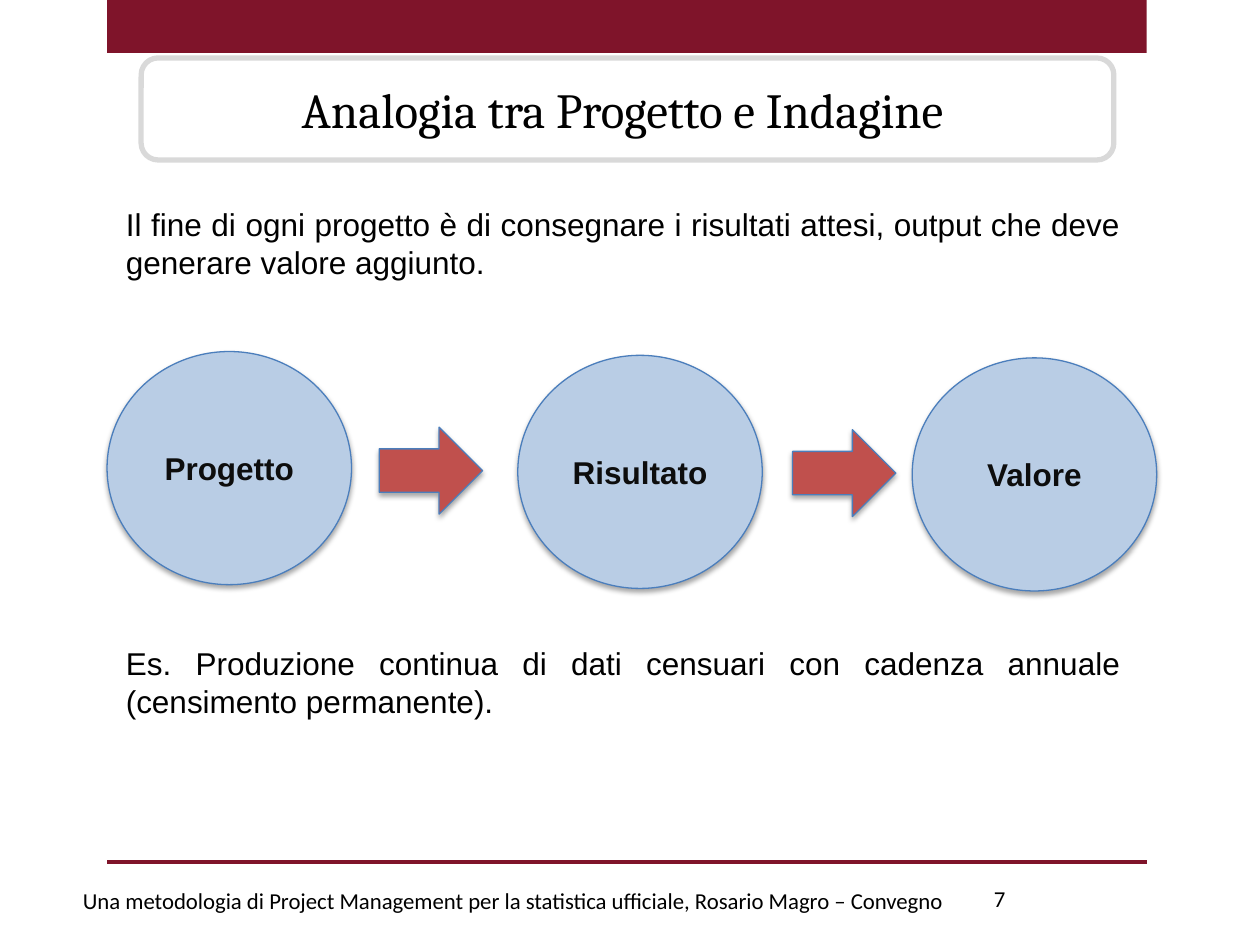
from lxml.etree import SubElement
from pptx import Presentation
from pptx.dml.color import RGBColor
from pptx.enum.shapes import MSO_CONNECTOR, MSO_SHAPE
from pptx.enum.text import MSO_ANCHOR, PP_ALIGN
from pptx.oxml.ns import qn
from pptx.util import Inches, Pt

COLORS = {
    "burgundy": "7F142A",
    "circle": "B9CDE5",
    "arrow": "C0504D",
    "outline": "4B7EBC",
    "frame": "D9D9D9",
    "white": "FFFFFF",
    "black": "000000",
    "dark": "0D0D0D",
}


def color(name):
    """Return the named colour."""
    return RGBColor.from_string(COLORS[name])


def add_run(paragraph, text, size, font="Arial", ink="black", bold=False):
    """Append a formatted run to a paragraph."""
    run = paragraph.add_run()
    run.text = text
    run.font.name = font
    run.font.size = Pt(size)
    run.font.bold = bold
    run.font.color.rgb = color(ink)


def add_shape(slide, kind, box, fill, line=None, width=0.75):
    """Add a filled preset shape without a shadow."""
    shape = slide.shapes.add_shape(kind, *map(Inches, box))
    shape.shadow.inherit = False
    shape.fill.solid()
    shape.fill.fore_color.rgb = color(fill)
    if line:
        shape.line.color.rgb = color(line)
        shape.line.width = Pt(width)
    else:
        shape.line.fill.background()
    return shape


def add_shadow(shape):
    """Give a shape a soft shadow below it."""
    effects = shape._element.spPr.find(qn("a:effectLst"))
    shadow = SubElement(effects, qn("a:outerShdw"), blurRad=str(Pt(3.1)),
                        dist=str(Pt(1.8)), dir="5400000", rotWithShape="0")
    shade = SubElement(shadow, qn("a:srgbClr"), val=COLORS["black"])
    SubElement(shade, qn("a:alpha"), val="35000")


def add_circle(slide, left, top, label):
    """Add a labelled circle of the flow."""
    circle = add_shape(slide, MSO_SHAPE.OVAL, (left, top, 1.94, 1.85), "circle", "outline")
    add_shadow(circle)
    circle.text_frame.vertical_anchor = MSO_ANCHOR.MIDDLE
    paragraph = circle.text_frame.paragraphs[0]
    paragraph.alignment = PP_ALIGN.CENTER
    add_run(paragraph, label, 18, ink="dark", bold=True)


def add_arrow(slide, left, top):
    """Add a block arrow between two circles."""
    arrow = add_shape(slide, MSO_SHAPE.RIGHT_ARROW, (left, top, 0.82, 0.69), "arrow", "outline")
    add_shadow(arrow)


def add_text(slide, box, text, size, font="Arial", alignment=PP_ALIGN.LEFT):
    """Add a wrapped text box with one paragraph."""
    frame = slide.shapes.add_textbox(*map(Inches, box)).text_frame
    frame.word_wrap = True
    paragraph = frame.paragraphs[0]
    paragraph.alignment = alignment
    add_run(paragraph, text, size, font)


def add_rule(slide):
    """Add the line above the footer."""
    rule = slide.shapes.add_connector(MSO_CONNECTOR.STRAIGHT, Inches(0.85), Inches(6.84),
                                      Inches(9.1), Inches(6.84))
    rule.line.color.rgb = color("burgundy")
    rule.line.width = Pt(2)
    SubElement(rule._element.spPr, qn("a:effectLst"))


def add_title(slide, text):
    """Add the rounded frame and place the title in it."""
    add_shape(slide, MSO_SHAPE.ROUNDED_RECTANGLE, (1.12, 0.46, 7.72, 0.81), "white", "frame", 3)
    title = slide.shapes.title
    title.left, title.top, title.width, title.height = map(Inches, (1.08, 0.46, 7.72, 0.81))
    title.text_frame.vertical_anchor = MSO_ANCHOR.MIDDLE
    paragraph = title.text_frame.paragraphs[0]
    paragraph.alignment = PP_ALIGN.CENTER
    add_run(paragraph, text, 28, "Cambria")
    slide.shapes._spTree.append(title._element)


def main():
    """Build the slide and save the presentation."""
    presentation = Presentation()
    presentation.slide_width = Inches(10)
    presentation.slide_height = Inches(7.5)
    slide = presentation.slides.add_slide(presentation.slide_layouts[5])

    add_shape(slide, MSO_SHAPE.RECTANGLE, (0.85, 0, 8.25, 0.42), "burgundy")
    add_rule(slide)
    add_title(slide, "Analogia tra Progetto e Indagine")

    for left, top, label in ((0.85, 2.79, "Progetto"), (4.11, 2.82, "Risultato"),
                             (7.24, 2.84, "Valore")):
        add_circle(slide, left, top, label)
    for left, top in ((3.01, 3.39), (6.29, 3.41)):
        add_arrow(slide, left, top)

    for top, text in (
        (1.58, "Il fine di ogni progetto è di consegnare i risultati attesi, "
               "output che deve generare valore aggiunto."),
        (5.06, "Es. Produzione continua di dati censuari con cadenza annuale "
               "(censimento permanente)."),
    ):
        add_text(slide, (0.9, top, 8.09, 0.71), text, 18, alignment=PP_ALIGN.JUSTIFY)

    footer = ("Una metodologia di Project Management per la statistica ufficiale, "
              "Rosario Magro – Convegno")
    add_text(slide, (0.56, 6.99, 7.1, 0.4), footer, 13, "Calibri")
    add_text(slide, (7.79, 6.97, 1.91, 0.4), "7", 13, "Calibri")
    presentation.save("out.pptx")


if __name__ == "__main__":
    main()
